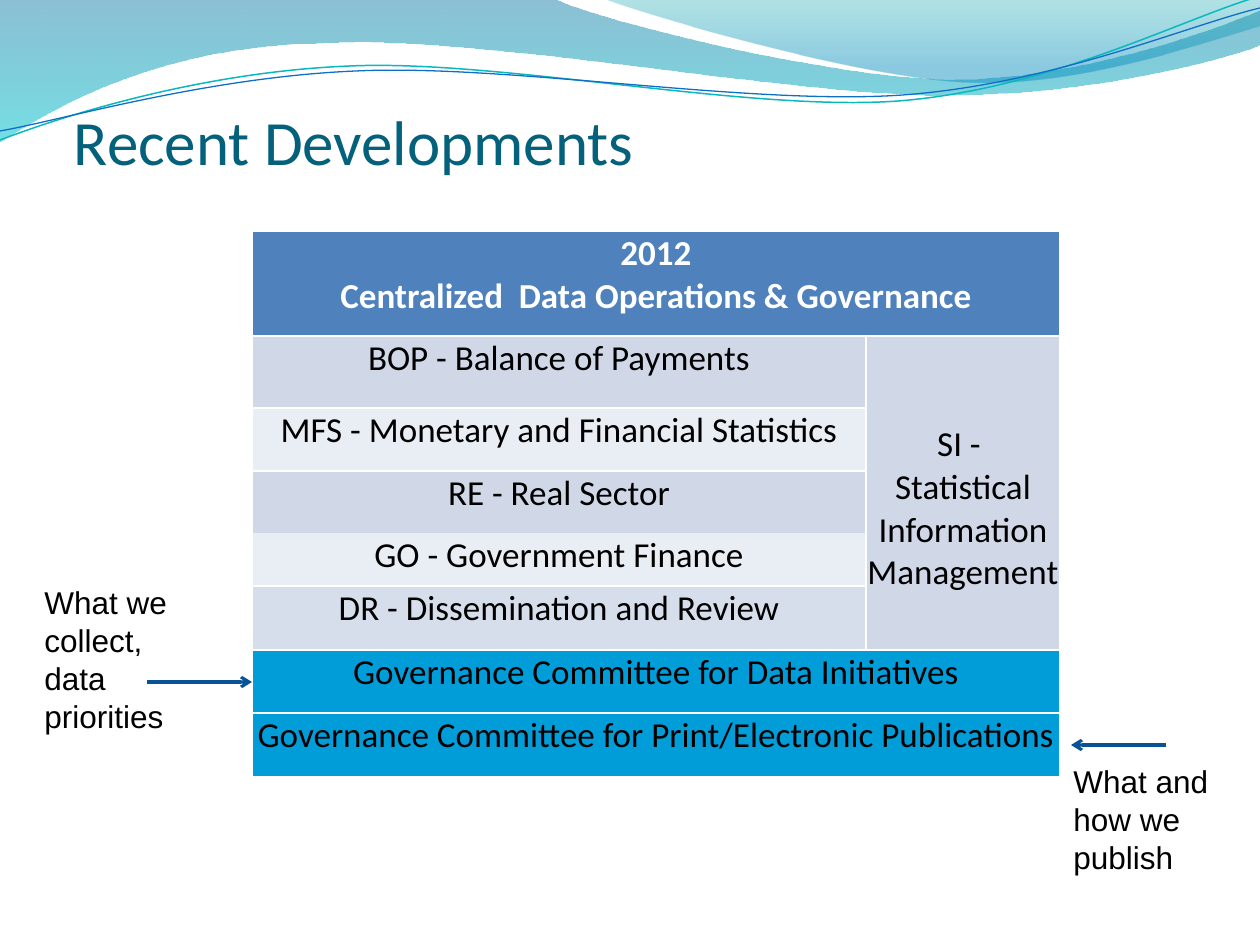
from lxml.etree import SubElement
from pptx import Presentation
from pptx.dml.color import RGBColor
from pptx.enum.shapes import MSO_CONNECTOR
from pptx.enum.text import MSO_ANCHOR, MSO_AUTO_SIZE, PP_ALIGN
from pptx.oxml.ns import qn
from pptx.util import Emu, Pt

PX = 914400 / 126
COLORS = {
    "title": "04617B", "black": "000000", "white": "FFFFFF",
    "header": "4F81BD", "band": "D0D8E8", "light": "E9EDF4",
    "committee": "009DD9", "arrow": "095295",
    "wave_top": "0074A1", "wave_bottom": "00C6CF",
    "crest_top": "00A1A9", "crest_bottom": "008BBF",
    "teal": "0AB8BF", "blue": "0F6FC6",
}

# Each segment is an end point, or two control points and an end point.
WAVE = [(0, 0), (554, -1), (600, 21, 837, 79, 955, 79),
        (1075, 79, 1207, 33, 1260, 11), (1261, 45),
        (1239, 55, 1096, 96, 940, 95), (784, 95, 481, 35, 324, 43),
        (163, 45, 58, 105, -1, 142)]
CREST = [(604, -1), (641, 14, 859, 78, 969, 82),
         (1079, 87, 1211, 40, 1260, 26), (1260, 0)]
TEAL_LINE = [(0, 140), (60, 117, 199, 72, 349, 66),
             (498, 59, 747, 112, 898, 101), (1050, 89, 1182, 19, 1257, -3)]
BLUE_LINE = [(0, 131), (59, 121, 207, 77, 357, 71),
             (508, 64, 752, 106, 903, 95), (1053, 84, 1186, 26, 1260, 8)]

COLUMNS = [614, 194]
# Row height, text, fill, whether the row spans both columns
ROWS = [
    (105, "2012\nCentralized  Data Operations & Governance", "header", True),
    (72, "BOP - Balance of Payments", "band", False),
    (63, "MFS - Monetary and Financial Statistics", "light", False),
    (62, "RE - Real Sector", "band", False),
    (53, "GO - Government Finance", "light", False),
    (64, "DR - Dissemination and Review", "band", False),
    (63, "Governance Committee for Data Initiatives", "committee", True),
    (64, "Governance Committee for Print/Electronic Publications", "committee", True),
]
SECTOR_FIRST, SECTOR_LAST = 1, 5
REAL_SECTOR, GOVERNMENT, DISSEMINATION = 3, 4, 5


def px(n):
    return Emu(round(n * PX))


def rgb(name):
    return RGBColor.from_string(COLORS[name])


def set_alpha(fill_element, percent):
    for color in fill_element.iter(qn("a:srgbClr")):
        SubElement(color, qn("a:alpha"), val=str(percent * 1000))


class Deck:
    def __init__(self, width, height):
        self.prs = Presentation()
        self.prs.slide_width, self.prs.slide_height = px(width), px(height)
        self.s = self.prs.slides.add_slide(self.prs.slide_layouts[6])

    def outline(self, segments, close):
        """Freeform through the end points, with cubic segments bent into curves."""
        ends = [seg[-2:] for seg in segments]
        left, top = (min(values) for values in zip(*ends))
        builder = self.s.shapes.build_freeform(*ends[0], scale=PX)
        builder.add_line_segments(ends[1:], close=close)
        sp = builder.convert_to_shape()
        sp.shadow.inherit = False
        sides = list(sp._element.spPr.iter(qn("a:lnTo")))
        for side, seg in zip(sides, segments[1:]):
            if len(seg) == 6:
                bend = side.makeelement(qn("a:cubicBezTo"))
                for x, y in zip(seg[::2], seg[1::2]):
                    SubElement(bend, qn("a:pt"), x=str(x - left), y=str(y - top))
                side.getparent().replace(side, bend)
        return sp

    def wave(self, segments, stops):
        """Closed shape shaded downwards; stops are (position, colour, opacity)."""
        sp = self.outline(segments, True)
        sp.line.fill.background()
        sp.fill.gradient()
        sp.fill.gradient_angle = 270
        elements = sp._element.spPr.iter(qn("a:gs"))
        for stop, element, (position, color, opacity) in zip(
                sp.fill.gradient_stops, elements, stops):
            stop.position = position
            stop.color.rgb = rgb(color)
            set_alpha(element, opacity)

    def curve(self, segments, color, width):
        sp = self.outline(segments, False)
        sp.fill.background()
        sp.line.color.rgb = rgb(color)
        sp.line.width = Pt(width)

    def style(self, p, size, color, font, bold=False):
        p.font.size, p.font.name, p.font.bold = Pt(size), font, bold
        p.font.color.rgb = rgb(color)

    def text(self, box, text, size, color, font):
        tf = self.s.shapes.add_textbox(*map(px, box)).text_frame
        tf.word_wrap = True
        tf.text = text
        self.style(tf.paragraphs[0], size, color, font)
        return tf

    def title(self, box, text):
        tf = self.text(box, text, 36, "title", "Calibri")
        tf.margin_left = tf.margin_right = tf.margin_bottom = 0
        tf.vertical_anchor = MSO_ANCHOR.BOTTOM

    def note(self, box, text):
        tf = self.text(box, text, 18, "black", "Arial")
        tf.auto_size = MSO_AUTO_SIZE.SHAPE_TO_FIT_TEXT

    def arrow(self, x1, x2, y):
        line = self.s.shapes.add_connector(MSO_CONNECTOR.STRAIGHT, *map(px, (x1, y, x2, y)))
        line.line.color.rgb = rgb("arrow")
        line.line.width = Pt(1.75)
        SubElement(line._element.spPr.find(qn("a:ln")), qn("a:tailEnd"), type="arrow")
        SubElement(line._element.spPr, qn("a:effectLst"))

    def table(self, left, top, columns, heights):
        table = self.s.shapes.add_table(
            len(heights), len(columns),
            *map(px, (left, top, sum(columns), sum(heights)))).table
        table.horz_banding = False
        for column, width in zip(table.columns, columns):
            column.width = px(width)
        for row, height in zip(table.rows, heights):
            row.height = px(height)
        return table

    def borders(self, cell, top=1, bottom=1):
        """White borders in points; a width of 0 hides the border."""
        tc_pr = cell._tc.get_or_add_tcPr()
        for side, width in (("L", 1), ("R", 1), ("T", top), ("B", bottom)):
            ln = SubElement(tc_pr, qn(f"a:ln{side}"), w=str(Pt(width)))
            if width:
                fill = SubElement(ln, qn("a:solidFill"))
                SubElement(fill, qn("a:srgbClr"), val=COLORS["white"])
            else:
                SubElement(ln, qn("a:noFill"))

    def cell(self, cell, text, fill, header=False):
        cell.margin_left = cell.margin_right = cell.margin_top = px(1)
        cell.margin_bottom = 0
        cell.fill.solid()
        cell.fill.fore_color.rgb = rgb(fill)
        cell.text = text
        for p in cell.text_frame.paragraphs:
            p.alignment = PP_ALIGN.CENTER
            self.style(p, 20, "white" if header else "black", "Calibri", header)


def add_governance_table(deck):
    table = deck.table(252, 231, COLUMNS, [row[0] for row in ROWS])
    for i, (_, text, fill, spans) in enumerate(ROWS):
        for j in range(len(COLUMNS)):
            top = 1.5 if i == SECTOR_FIRST else 1
            bottom = 1.5 if i == 0 or (j == 1 and i == SECTOR_LAST) else 1
            if j == 0 and i == GOVERNMENT:
                top = 0
            if j == 0 and i == REAL_SECTOR:
                bottom = 0
            deck.borders(table.cell(i, j), top, bottom)
        if spans:
            table.cell(i, 0).merge(table.cell(i, 1))
        deck.cell(table.cell(i, 0), text, fill, header=i == 0)
    set_alpha(table.cell(DISSEMINATION, 0)._tc.tcPr.find(qn("a:solidFill")), 84)

    management = table.cell(SECTOR_FIRST, 1)
    management.merge(table.cell(SECTOR_LAST, 1))
    deck.cell(management, "SI -  Statistical Information\nManagement", "band")
    management.margin_top = px(87)


def main():
    deck = Deck(1260, 945)
    deck.wave(WAVE, [(0, "wave_top", 45), (1, "wave_bottom", 55)])
    deck.wave(CREST, [(0, "crest_top", 30), (0.8, "crest_bottom", 45)])
    deck.curve(TEAL_LINE, "teal", 0.85)
    deck.curve(BLUE_LINE, "blue", 0.75)
    deck.title((74, 21, 1134, 157), "Recent Developments")
    add_governance_table(deck)
    deck.note((32, 577, 189, 165), "What we collect, data priorities")
    deck.arrow(147, 252, 682)
    deck.note((1061, 756, 179, 127), "What and how we publish")
    deck.arrow(1166, 1071, 745)
    deck.prs.save("out.pptx")


if __name__ == "__main__":
    main()
